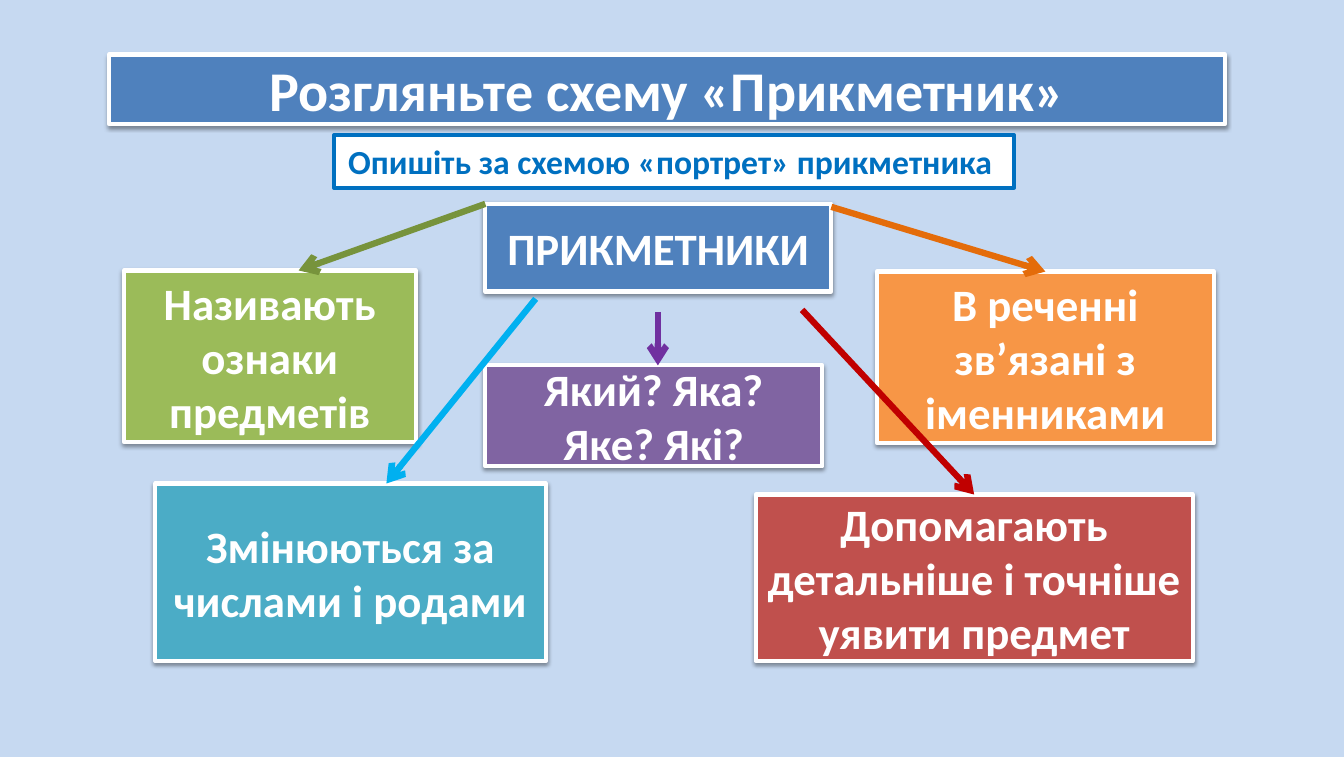
from dataclasses import dataclass
from typing import Optional

from lxml.etree import SubElement
from pptx import Presentation
from pptx.dml.color import RGBColor
from pptx.enum.shapes import MSO_CONNECTOR as CONNECTOR, MSO_SHAPE as SHAPE
from pptx.enum.text import MSO_ANCHOR as ANCHOR, MSO_AUTO_SIZE as AUTO_SIZE, PP_ALIGN as ALIGN
from pptx.oxml.ns import qn
from pptx.util import Emu, Inches, Pt

WIDTH, HEIGHT = Inches(13.32), Inches(7.5)
FONT = "Calibri"
TOP_SIDE = 0
COLOURS = {
    "background": "C6D9F1",
    "white": "FFFFFF",
    "shadow": "000000",
    "blue": "4F81BD",
    "prompt": "0070C0",
    "green": "9BBB59",
    "purple": "8064A2",
    "orange": "F79646",
    "teal": "4BACC6",
    "red": "C0504D",
    "green arrow": "77933C",
    "orange arrow": "E46C0A",
    "purple arrow": "7030A0",
    "cyan arrow": "00B0F0",
    "red arrow": "C00000",
}


@dataclass(frozen=True)
class Card:
    key: str
    text: str
    left: float
    top: float
    width: float
    height: float
    fill: str
    ink: str = "white"
    size: int = 32
    inset: float = 0.1
    raised: bool = True


@dataclass(frozen=True)
class Arrow:
    start: tuple[float, float]
    end: tuple[float, float]
    colour: str
    target: Optional[str] = None


CARDS = [
    Card("title", "Розгляньте схему «Прикметник»", 8.11, 7.2, 83.03, 9.2, "blue",
         size=40, inset=0.12),
    Card("prompt", "Опишіть за схемою «портрет» прикметника ", 24.85, 17.87, 50.6, 6.93,
         "white", ink="prompt", size=24, inset=0.12, raised=False),
    Card("adjectives", "ПРИКМЕТНИКИ", 36.11, 26.93, 25.75, 11.6, "blue"),
    Card("features", "Називають ознаки предметів", 9.23, 35.73, 21.7, 22.67, "green"),
    Card("questions", "Який? Яка? Яке? Які?", 36.11, 48.27, 25.08, 13.33, "purple"),
    Card("nouns", "В реченні зв’язані з іменниками", 65.24, 35.87, 25.08, 22.67, "orange"),
    Card("forms", "Змінюються за числами і родами", 11.56, 63.87, 29.05, 23.47, "teal"),
    Card("detail", "Допомагають детальніше і точніше уявити предмет",
         56.23, 65.33, 32.51, 22, "red"),
]
ARROWS = [
    Arrow((36.11, 26.93), (22.22, 35.73), "green arrow"),
    Arrow((61.86, 27.33), (77.78, 35.87), "orange arrow", "nouns"),
    Arrow((48.95, 41.2), (48.95, 48.27), "purple arrow"),
    Arrow((39.86, 39.47), (28.75, 63.87), "cyan arrow"),
    Arrow((59.68, 40.93), (72.49, 65.33), "red arrow", "detail"),
]


def across(percent: float) -> Emu:
    return Emu(round(WIDTH * percent / 100))


def down(percent: float) -> Emu:
    return Emu(round(HEIGHT * percent / 100))


def colour(key: str) -> RGBColor:
    return RGBColor.from_string(COLOURS[key])


def add_shadow(shape) -> None:
    effects = shape._element.spPr.find(qn("a:effectLst"))
    shadow = SubElement(effects, qn("a:outerShdw"), blurRad=str(Pt(3.1)),
                        dist=str(Pt(1.6)), dir="5400000", rotWithShape="0")
    tint = SubElement(shadow, qn("a:srgbClr"), val=COLOURS["shadow"])
    SubElement(tint, qn("a:alpha"), val="38000")


def draw_card(slide, card: Card):
    box = slide.shapes.add_shape(SHAPE.RECTANGLE, across(card.left), down(card.top),
                                 across(card.width), down(card.height))
    box.fill.solid()
    box.fill.fore_color.rgb = colour(card.fill)
    box.line.color.rgb = colour(card.ink)
    box.line.width = Pt(3)
    box.shadow.inherit = False
    if card.raised:
        add_shadow(box)

    frame = box.text_frame
    frame.word_wrap = True
    frame.auto_size = AUTO_SIZE.NONE if card.raised else AUTO_SIZE.SHAPE_TO_FIT_TEXT
    frame.vertical_anchor = ANCHOR.MIDDLE if card.raised else ANCHOR.TOP
    frame.margin_left = frame.margin_right = Inches(card.inset)
    frame.margin_top = frame.margin_bottom = Inches(card.inset / 2)

    paragraph = frame.paragraphs[0]
    paragraph.alignment = ALIGN.CENTER
    run = paragraph.add_run()
    run.text = card.text
    run.font.name = FONT
    run.font.size = Pt(card.size)
    run.font.bold = True
    run.font.color.rgb = colour(card.ink)
    return box


def draw_arrow(slide, arrow: Arrow, boxes: dict) -> None:
    (start_x, start_y), (end_x, end_y) = arrow.start, arrow.end
    link = slide.shapes.add_connector(CONNECTOR.STRAIGHT, across(start_x), down(start_y),
                                      across(end_x), down(end_y))
    if arrow.target:
        link.end_connect(boxes[arrow.target], TOP_SIDE)
    link.line.color.rgb = colour(arrow.colour)
    link.line.width = Pt(4.5)
    SubElement(link.line._get_or_add_ln(), qn("a:tailEnd"), type="arrow")
    SubElement(link._element.spPr, qn("a:effectLst"))


def main() -> None:
    deck = Presentation()
    deck.slide_width, deck.slide_height = WIDTH, HEIGHT
    slide = deck.slides.add_slide(deck.slide_layouts[6])
    slide.background.fill.solid()
    slide.background.fill.fore_color.rgb = colour("background")
    boxes = {card.key: draw_card(slide, card) for card in CARDS}
    for arrow in ARROWS:
        draw_arrow(slide, arrow, boxes)
    deck.save("out.pptx")


if __name__ == "__main__":
    main()
